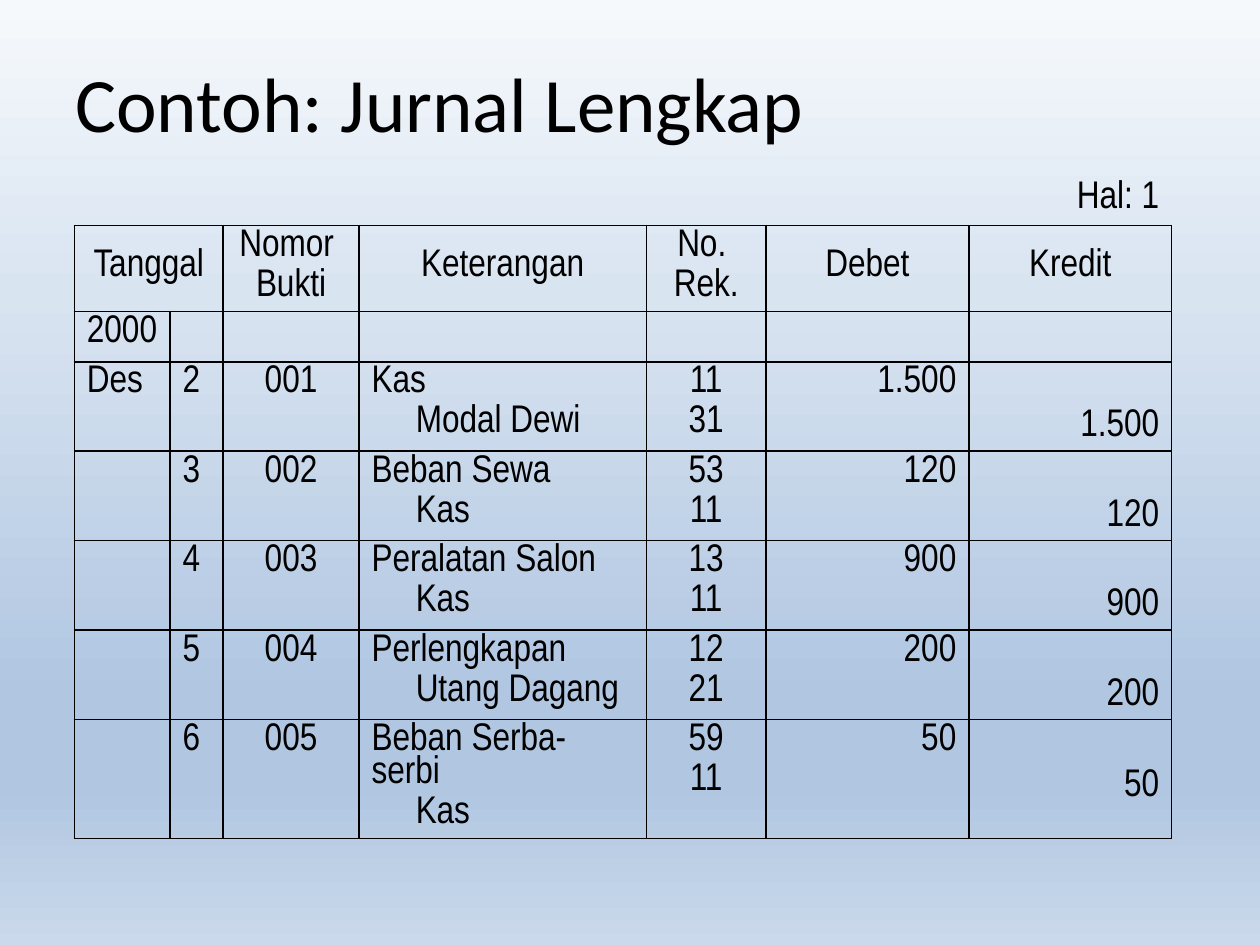
from dataclasses import dataclass

from lxml.etree import SubElement
from pptx import Presentation
from pptx.dml.color import RGBColor
from pptx.enum.text import MSO_ANCHOR, PP_ALIGN
from pptx.oxml.ns import qn
from pptx.util import Inches, Pt

BLACK = "000000"
BACKGROUND_STOPS = [(0, "F6F9FC"), (31, "D9E4F1"), (74, "B0C6E1"),
                    (83, "B0C6E1"), (100, "CAD9EB")]
COLUMN_WIDTHS = [0.76, 0.42, 1.08, 2.28, 0.95, 1.61, 1.61]
ENTRY_HEIGHT, WRAPPED_HEIGHT = 0.71, 0.93
HEADER_ROW, YEAR_ROW, FIRST_ENTRY_ROW = 1, 2, 3
CREDIT_COLUMN = 6
HEADERS = {0: ["Tanggal"], 2: ["Nomor ", "Bukti"], 3: ["Keterangan"],
           4: ["No. ", "Rek."], 5: ["Debet"], 6: ["Kredit"]}
LEFT, CENTER, RIGHT = PP_ALIGN.LEFT, PP_ALIGN.CENTER, PP_ALIGN.RIGHT
COLUMN_ALIGNMENTS = [LEFT, LEFT, CENTER, LEFT, CENTER, RIGHT, RIGHT]


@dataclass
class JournalEntry:
    month: str
    day: str
    voucher: str
    debit_account: str
    credit_account: str
    account_numbers: list[str]
    amount: str
    height: float = ENTRY_HEIGHT

    def columns(self) -> list[list[str]]:
        return [[self.month], [self.day], [self.voucher],
                [self.debit_account, self.credit_account],
                self.account_numbers, [self.amount], [self.amount]]


ENTRIES = [
    JournalEntry("Des", "2", "001", "Kas", "Modal Dewi", ["11", "31"], "1.500"),
    JournalEntry("", "3", "002", "Beban Sewa", "Kas", ["53", "11"], "120"),
    JournalEntry("", "4", "003", "Peralatan Salon", "Kas", ["13", "11"], "900"),
    JournalEntry("", "5", "004", "Perlengkapan", "Utang Dagang", ["12", "21"], "200"),
    JournalEntry("", "6", "005", "Beban Serba-serbi", "Kas", ["59", "11"], "50",
                 WRAPPED_HEIGHT),
]


def color(value: str) -> RGBColor:
    return RGBColor.from_string(value)


def set_background(slide) -> None:
    fill = slide.background.fill
    fill.gradient()
    fill.gradient_angle = 270
    stop_list = slide._element.find(".//" + qn("a:gsLst"))
    for stop in list(stop_list):
        stop_list.remove(stop)
    for position, value in BACKGROUND_STOPS:
        stop = SubElement(stop_list, qn("a:gs"), pos=str(position * 1000))
        SubElement(stop, qn("a:srgbClr"), val=value)


def write_run(paragraph, text: str, font_name: str, size: float) -> None:
    run = paragraph.add_run()
    run.text = text
    for name, value in {"name": font_name, "size": Pt(size)}.items():
        setattr(run.font, name, value)
    run.font.color.rgb = color(BLACK)


def write_cell(cell, lines: list[str], alignment, anchor=MSO_ANCHOR.TOP,
               second_indent: float = 0) -> None:
    cell.vertical_anchor = anchor
    paragraph_format = {"alignment": alignment, "line_spacing": Pt(18.9),
                        "space_before": Pt(4)}
    for index, text in enumerate(lines):
        frame = cell.text_frame
        paragraph = frame.add_paragraph() if index else frame.paragraphs[0]
        for name, value in paragraph_format.items():
            setattr(paragraph, name, value)
        if index and second_indent:
            paragraph._p.get_or_add_pPr().set("marL", str(Inches(second_indent)))
        if text:
            write_run(paragraph, text, "Arial Narrow", 22)


def set_borders(cell, visible_sides: str) -> None:
    properties = cell._tc.get_or_add_tcPr()
    for index, side in enumerate("LRTB"):
        line = SubElement(properties, qn(f"a:ln{side}"), w=str(Pt(1)))
        if side in visible_sides:
            fill = SubElement(line, qn("a:solidFill"))
            SubElement(fill, qn("a:srgbClr"), val=BLACK)
        else:
            SubElement(line, qn("a:noFill"))
        properties.insert(index, line)


def add_journal(slide):
    heights = [0.39, 0.67, 0.39] + [entry.height for entry in ENTRIES]
    frame = slide.shapes.add_table(
        len(heights), len(COLUMN_WIDTHS), Inches(0.59), Inches(1.39),
        Inches(sum(COLUMN_WIDTHS)), Inches(sum(heights)))
    table = frame.table
    table.first_row = table.horz_banding = False
    for column, width in zip(table.columns, COLUMN_WIDTHS):
        column.width = Inches(width)
    for row_index, (row, height) in enumerate(zip(table.rows, heights)):
        row.height = Inches(height)
        for cell in row.cells:
            cell.fill.background()
            set_borders(cell, "LRTB" if row_index else "B")
            write_cell(cell, [""], LEFT)
    for row_index in (0, HEADER_ROW):
        table.cell(row_index, 0).merge(table.cell(row_index, 1))
    return table


def fill_entry(table, row_index: int, entry: JournalEntry) -> None:
    for column_index, lines in enumerate(entry.columns()):
        cell = table.cell(row_index, column_index)
        is_credit = column_index == CREDIT_COLUMN
        write_cell(cell, lines, COLUMN_ALIGNMENTS[column_index],
                   MSO_ANCHOR.BOTTOM if is_credit else MSO_ANCHOR.TOP,
                   second_indent=0.35 if column_index == 3 else 0)
        if is_credit:
            # Keep the credit amount on the second line of a taller row
            cell.margin_bottom = Inches(0.05 + entry.height - ENTRY_HEIGHT)


def main() -> None:
    presentation = Presentation()
    presentation.slide_width, presentation.slide_height = Inches(10), Inches(7.5)
    slide = presentation.slides.add_slide(presentation.slide_layouts[6])
    set_background(slide)

    # Title
    title = slide.shapes.add_textbox(Inches(0.5), Inches(0.3), Inches(9), Inches(1.01))
    title.text_frame.word_wrap = True
    title.text_frame.vertical_anchor = MSO_ANCHOR.MIDDLE
    write_run(title.text_frame.paragraphs[0], "Contoh: Jurnal Lengkap", "Calibri", 44)

    # Page number and headings
    table = add_journal(slide)
    write_cell(table.cell(0, CREDIT_COLUMN), ["Hal: 1"], RIGHT, MSO_ANCHOR.MIDDLE)
    for column_index, lines in HEADERS.items():
        write_cell(table.cell(HEADER_ROW, column_index), lines, CENTER, MSO_ANCHOR.MIDDLE)

    # Journal entries
    write_cell(table.cell(YEAR_ROW, 0), ["2000"], LEFT)
    for row_index, entry in enumerate(ENTRIES, FIRST_ENTRY_ROW):
        fill_entry(table, row_index, entry)

    presentation.save("out.pptx")


if __name__ == "__main__":
    main()
